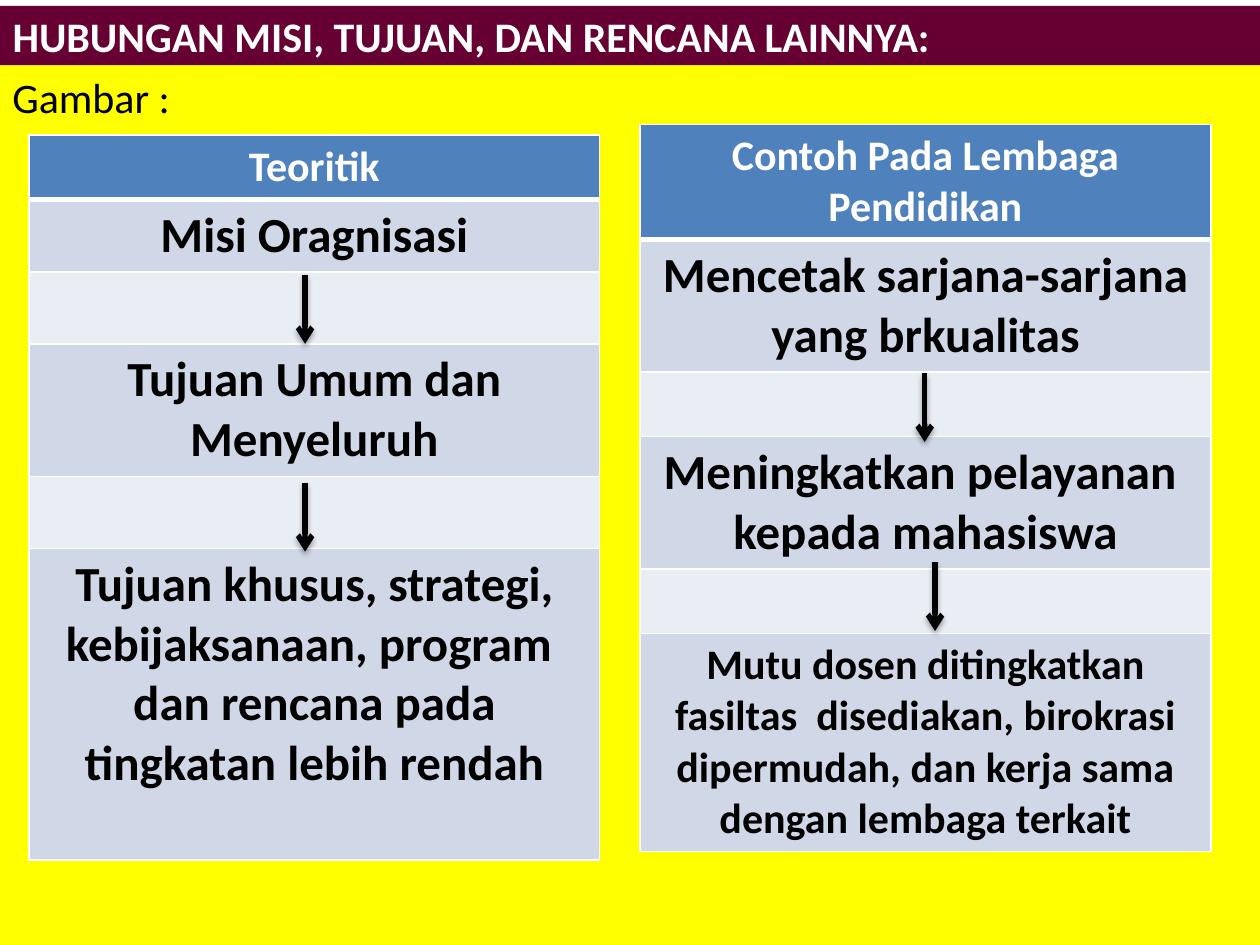
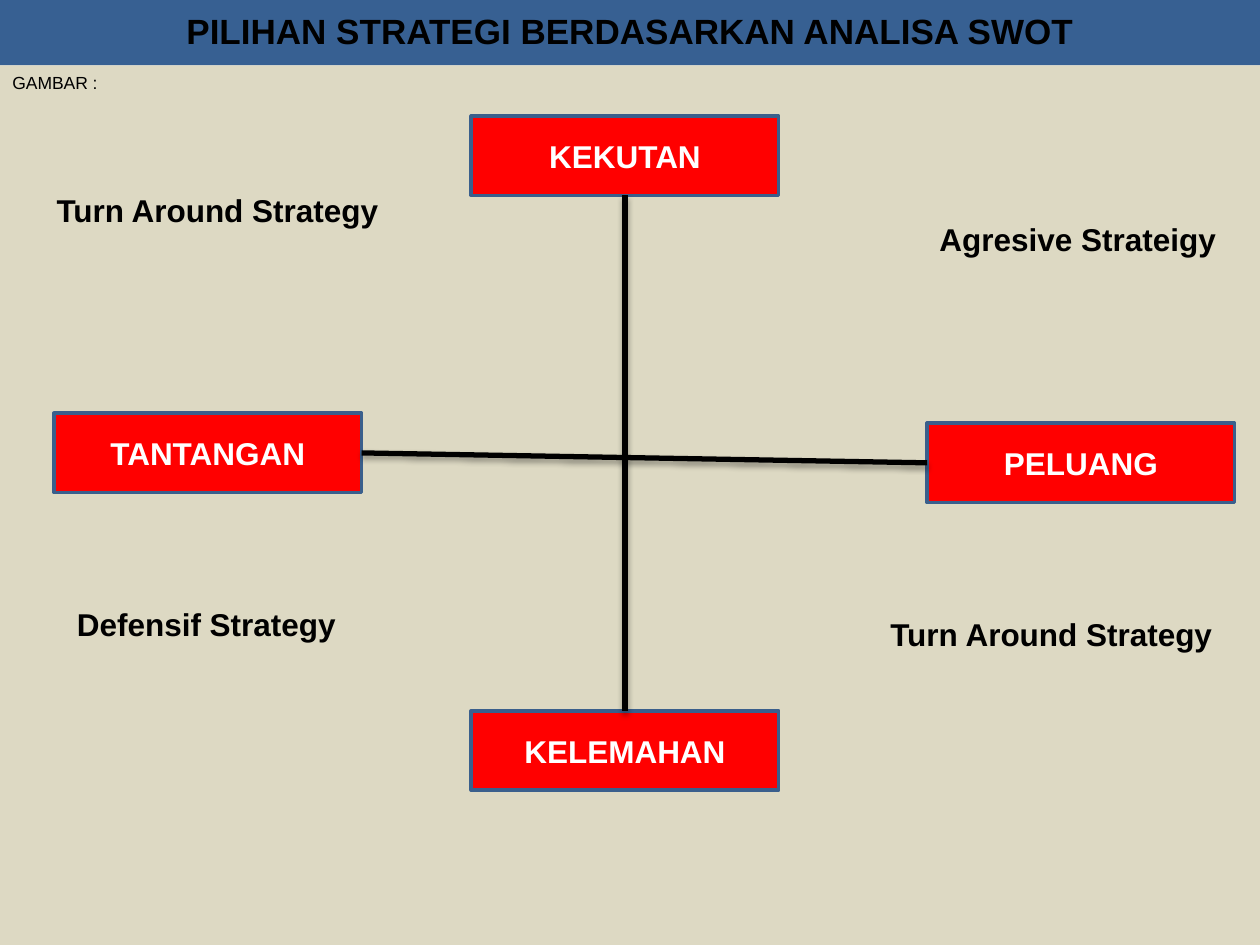
from lxml import etree
from pptx import Presentation
from pptx.dml.color import RGBColor
from pptx.enum.shapes import MSO_CONNECTOR, MSO_SHAPE
from pptx.enum.text import MSO_ANCHOR, MSO_AUTO_SIZE, PP_ALIGN
from pptx.oxml import parse_xml
from pptx.oxml.ns import nsdecls, qn
from pptx.util import Cm, Pt

LEFT, CENTER = PP_ALIGN.LEFT, PP_ALIGN.CENTER
TOP, MIDDLE = MSO_ANCHOR.TOP, MSO_ANCHOR.MIDDLE
NO_FIT, GROW = MSO_AUTO_SIZE.NONE, MSO_AUTO_SIZE.SHAPE_TO_FIT_TEXT
RECT, STRAIGHT = MSO_SHAPE.RECTANGLE, MSO_CONNECTOR.STRAIGHT

SLIDE_W, SLIDE_H = 25.4, 19.05
BODY_TOP = 1.32
BLACK, WHITE, RED = "000000", "FFFFFF", "FF0000"
HEADER, ROW_DARK, ROW_LIGHT = "4F81BD", "D0D8E8", "E9EDF4"
BOX_EDGE = "3A5F8C"

MISSION = dict(
    title="HUBUNGAN MISI, TUJUAN, DAN RENCANA LAINNYA:", caption="Gambar :",
    band=(0.12, 1.2), band_fill="660033", body_fill="FFFF00", align=LEFT,
    title_font=dict(name="Calibri", size=24, color=WHITE, bold=True),
    caption_font=dict(name="Calibri", size=24, color=BLACK))
SWOT = dict(
    title="PILIHAN STRATEGI BERDASARKAN ANALISA SWOT", caption="GAMBAR :",
    band=(-0.08, 1.4), band_fill="376092", body_fill="DDD9C3", align=CENTER,
    title_font=dict(name="Arial", size=20, color=BLACK, bold=True),
    caption_font=dict(name="Arial", size=10, color=BLACK))

TABLE_W = 11.51
TABLES = [
    ((0.58, 2.72), [
        ("Teoritik", 24, 1.3),
        ("Misi Oragnisasi", 28, 1.45),
        ("", 24, 1.45),
        ("Tujuan Umum dan Menyeluruh", 28, 2.67),
        ("", 24, 1.45),
        ("Tujuan khusus, strategi, kebijaksanaan, program  dan rencana pada "
         "tingkatan lebih rendah", 28, 6.28)]),
    ((12.9, 2.51), [
        ("Contoh Pada Lembaga Pendidikan", 24, 2.31),
        ("Mencetak sarjana-sarjana yang brkualitas", 28, 2.67),
        ("", 24, 1.3),
        ("Meningkatkan pelayanan  kepada mahasiswa", 28, 2.67),
        ("", 24, 1.3),
        ("Mutu dosen ditingkatkan fasiltas  disediakan, birokrasi dipermudah, "
         "dan kerja sama dengan lembaga terkait", 24, 4.39)]),
]
ARROW_LEN = 1.39
ARROWS = [(6.15, 5.54), (6.15, 9.73), (18.64, 7.52), (18.85, 11.33)]

BOX_W, BOX_H = 6.2, 1.6
FACTORS = {"KEKUTAN": (9.5, 2.34), "TANTANGAN": (1.09, 8.33),
           "PELUANG": (18.69, 8.53), "KELEMAHAN": (9.5, 14.33)}
AXES = [("KEKUTAN", 2, "KELEMAHAN", 0), ("TANTANGAN", 3, "PELUANG", 1)]
STRATEGIES = [("Turn Around Strategy", 0.89, 3.73, 7.06),
              ("Turn Around Strategy", 17.7, 12.27, 7.06),
              ("Defensif Strategy", 1.3, 12.07, 5.79),
              ("Agresive Strateigy", 18.69, 4.32, 6.15)]
LABEL_H = 1.02

SHADOW = (f'<a:effectLst {nsdecls("a")}><a:outerShdw blurRad="40000" dist="23000" '
          'dir="5400000" rotWithShape="0"><a:srgbClr val="000000">'
          '<a:alpha val="35000"/></a:srgbClr></a:outerShdw></a:effectLst>')


def rgb(value):
    return RGBColor.from_string(value)


def cm(*values):
    return [Cm(v) for v in values]


def write(tf, text, font, align=LEFT, **frame):
    for key, value in frame.items():
        setattr(tf, key, value)
    p = tf.paragraphs[0]
    p.alignment = align
    r = p.add_run()
    r.text = text
    for key, value in font.items():
        if key == "color":
            r.font.color.rgb = rgb(value)
        else:
            setattr(r.font, key, Pt(value) if key == "size" else value)


def paint(sp, color):
    sp.fill.solid()
    sp.fill.fore_color.rgb = rgb(color)


def add_rect(s, box, color, edge=None):
    sp = s.shapes.add_shape(RECT, *cm(*box))
    sp.shadow.inherit = False
    paint(sp, color)
    if edge:
        sp.line.color.rgb = rgb(edge)
        sp.line.width = Pt(2)
    else:
        sp.line.fill.background()
    return sp


def add_slide(prs, look):
    s = prs.slides.add_slide(prs.slide_layouts[5])
    sp = s.shapes.title
    top, height = look["band"]
    sp.left, sp.top, sp.width, sp.height = cm(0, top, SLIDE_W, height)
    paint(sp, look["band_fill"])
    write(sp.text_frame, look["title"], look["title_font"], look["align"],
          vertical_anchor=MIDDLE, auto_size=NO_FIT, word_wrap=True)
    body = add_rect(s, (0, BODY_TOP, SLIDE_W, SLIDE_H - BODY_TOP), look["body_fill"])
    write(body.text_frame, look["caption"], look["caption_font"],
          vertical_anchor=TOP, word_wrap=True)
    return s


def add_line(s, x1, y1, x2, y2, arrow=False):
    cx = s.shapes.add_connector(STRAIGHT, *cm(x1, y1, x2, y2))
    cx.line.color.rgb = rgb(BLACK)
    cx.line.width = Pt(3)
    if arrow:
        ln = cx.line._get_or_add_ln()
        etree.SubElement(ln, qn("a:tailEnd"), type="arrow")
    cx._element.spPr.append(parse_xml(SHADOW))
    return cx


def set_borders(cell, **widths):
    tcPr = cell._tc.get_or_add_tcPr()
    for i, side in enumerate(("lnL", "lnR", "lnT", "lnB")):
        ln = parse_xml(f'<a:{side} {nsdecls("a")} w="{Pt(widths.get(side, 1))}">'
                       f'<a:solidFill><a:srgbClr val="{WHITE}"/></a:solidFill></a:{side}>')
        tcPr.insert(i, ln)


def add_levels(s, origin, rows):
    total = sum(height for _, _, height in rows)
    table = s.shapes.add_table(len(rows), 1, *cm(*origin, TABLE_W, total)).table
    for i, (text, size, height) in enumerate(rows):
        table.rows[i].height = Cm(height)
        cell = table.cell(i, 0)
        paint(cell, HEADER if i == 0 else ROW_DARK if i % 2 else ROW_LIGHT)
        set_borders(cell, lnT=3 if i == 1 else 1, lnB=3 if i == 0 else 1)
        if text:
            font = dict(name="Calibri", size=size, bold=True,
                        color=BLACK if i else WHITE)
            write(cell.text_frame, text, font, CENTER)


def build_mission(prs):
    s = add_slide(prs, MISSION)
    for origin, rows in TABLES:
        add_levels(s, origin, rows)
    for x, y in ARROWS:
        add_line(s, x, y, x, y + ARROW_LEN, arrow=True)


def build_swot(prs):
    s = add_slide(prs, SWOT)
    font = dict(name="Arial", size=18, bold=True)
    boxes = {}
    for name, (x, y) in FACTORS.items():
        boxes[name] = add_rect(s, (x, y, BOX_W, BOX_H), RED, BOX_EDGE)
        write(boxes[name].text_frame, name, dict(font, color=WHITE), CENTER,
              vertical_anchor=MIDDLE)
    for start, start_side, end, end_side in AXES:
        cx = add_line(s, 0, 0, 1, 1)
        cx.begin_connect(boxes[start], start_side)
        cx.end_connect(boxes[end], end_side)
    for text, x, y, width in STRATEGIES:
        sp = s.shapes.add_textbox(*cm(x, y, width, LABEL_H))
        write(sp.text_frame, text, dict(font, color=BLACK),
              word_wrap=False, auto_size=GROW)


def main():
    prs = Presentation()
    prs.slide_width, prs.slide_height = cm(SLIDE_W, SLIDE_H)
    build_mission(prs)
    build_swot(prs)
    prs.save("out.pptx")


if __name__ == "__main__":
    main()
